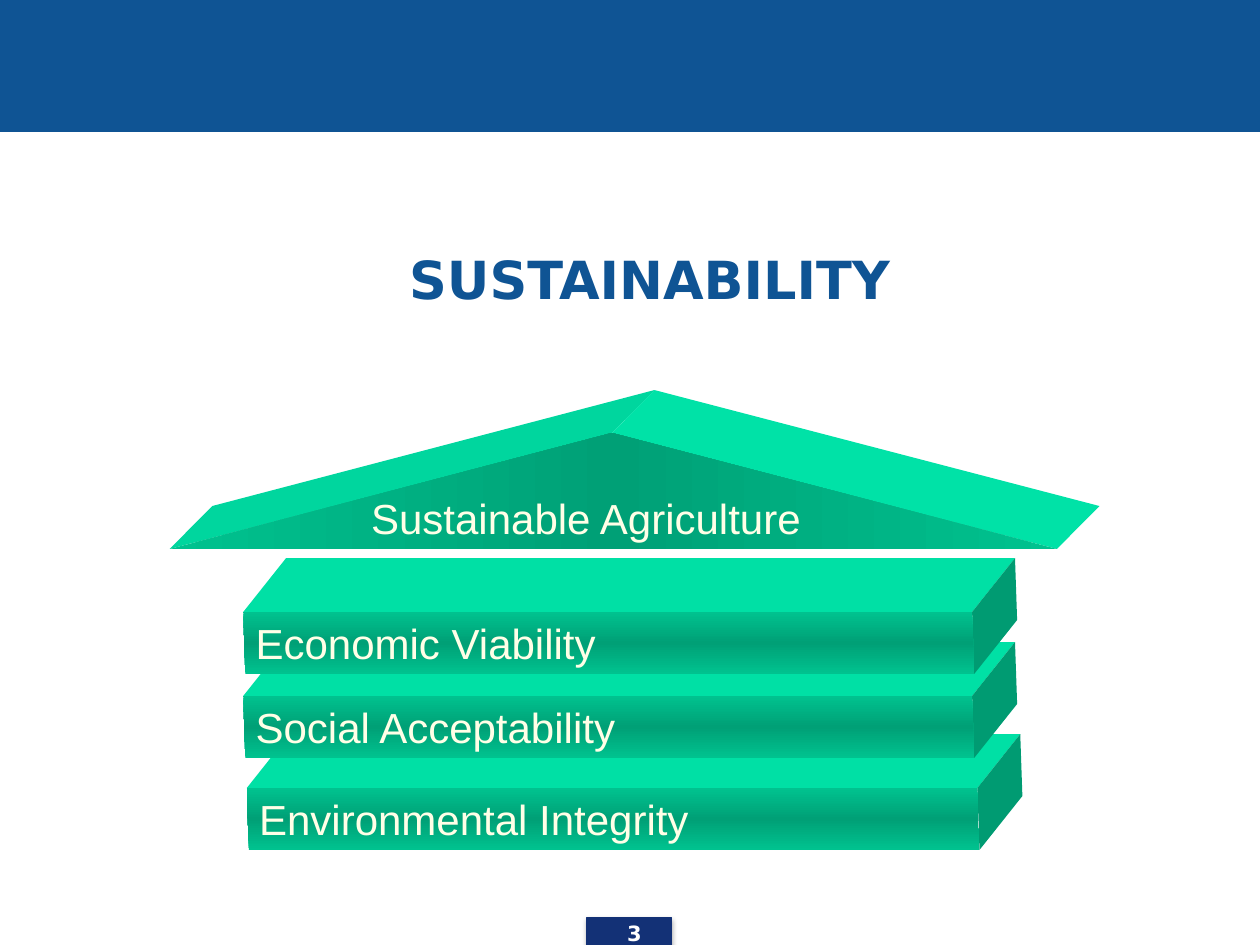
from copy import deepcopy

from lxml.etree import SubElement
from pptx import Presentation
from pptx.dml.color import RGBColor
from pptx.enum.shapes import MSO_SHAPE
from pptx.enum.text import MSO_ANCHOR, PP_ALIGN
from pptx.oxml.ns import qn
from pptx.util import Pt

COLORS = {
    "band": "0F5494",
    "badge": "133176",
    "white": "FFFFFF",
    "cream": "FFFFE7",
    "front_edge": "00C28F",
    "front_middle": "00A076",
    "bar_top": "00E0A5",
    "bar_side": "009B72",
    "roof_left": "00D69E",
    "roof_right": "00E2A7",
    "shadow": "000000",
}
LAYERS = [
    ("Environmental Integrity", 141, 450.3, 417.5),
    ("Social Acceptability", 139, 397.7, 416.5),
    ("Economic Viability", 139, 349.7, 416.5),
]
BAR_HEIGHT, BAR_SKEW = 35.4, 1.2
BAR_DEPTH = (24.5, -30.8)
ROOF_DEPTH = (24.3, -24.5)


def color(name):
    """Return the named colour."""
    return RGBColor.from_string(COLORS[name])


def shifted(point, offset):
    """Move a point by an offset."""
    return point[0] + offset[0], point[1] + offset[1]


def write(shape, text, size, tint, font, bold=False,
          align=PP_ALIGN.LEFT, anchor=MSO_ANCHOR.MIDDLE):
    """Write one formatted line into a shape."""
    frame = shape.text_frame
    frame.word_wrap = True
    frame.vertical_anchor = anchor
    line = frame.paragraphs[0]
    line.alignment = align
    run = line.add_run()
    run.text = text
    run.font.size = Pt(size)
    run.font.name = font
    run.font.bold = bold
    run.font.color.rgb = color(tint)
    return line


def add_rectangle(slide, left, top, width, height, tint):
    """Add a plain rectangle with a matching outline."""
    rectangle = slide.shapes.add_shape(
        MSO_SHAPE.RECTANGLE, Pt(left), Pt(top), Pt(width), Pt(height))
    rectangle.shadow.inherit = False
    rectangle.fill.solid()
    rectangle.fill.fore_color.rgb = color(tint)
    rectangle.line.color.rgb = color(tint)
    rectangle.line.width = Pt(0.75)
    return rectangle


def add_face(slide, corners, tint=None):
    """Add an unlined polygon, solid when a tint is given."""
    points = [(Pt(x), Pt(y)) for x, y in corners]
    builder = slide.shapes.build_freeform(*points[0], scale=1.0)
    builder.add_line_segments(points[1:], close=True)
    face = builder.convert_to_shape()
    face.shadow.inherit = False
    face.line.fill.background()
    if tint:
        face.fill.solid()
        face.fill.fore_color.rgb = color(tint)
    return face


def shade(face, angle):
    """Give a front face a gradient that is darkest in the middle."""
    face.fill.gradient()
    face.fill.gradient_angle = angle
    for stop in face.fill.gradient_stops:
        stop.color.rgb = color("front_edge")
    stops = face._element.spPr.find(qn("a:gradFill")).find(qn("a:gsLst"))
    stops.insert(1, deepcopy(stops[0]))
    middle = face.fill.gradient_stops[1]
    middle.position = 0.5
    middle.color.rgb = color("front_middle")


def add_bar(slide, text, left, top, width):
    """Add a labelled block with a top and a side face."""
    upper_left, upper_right = (left, top), (left + width, top)
    down = (BAR_SKEW, BAR_HEIGHT)
    lower_left, lower_right = shifted(upper_left, down), shifted(upper_right, down)
    back_left, back_right, back_lower = (
        shifted(corner, BAR_DEPTH)
        for corner in (upper_left, upper_right, lower_right))
    add_face(slide, [upper_left, back_left, back_right, upper_right], "bar_top")
    add_face(slide, [upper_right, back_right, back_lower, lower_right], "bar_side")
    front = add_face(slide, [upper_left, upper_right, lower_right, lower_left])
    shade(front, 90)
    write(front, text, 24, "cream", "Arial")


def add_roof(slide, text):
    """Add the gable with its two roof faces and its label."""
    left, peak, right = (97, 313.7), (349.7, 247.4), (604, 313.7)
    back_left, back_peak, back_right = (
        shifted(corner, ROOF_DEPTH) for corner in (left, peak, right))
    add_face(slide, [left, back_left, back_peak, peak], "roof_left")
    add_face(slide, [peak, back_peak, back_right, right], "roof_right")
    shade(add_face(slide, [left, peak, right]), 0)
    label = slide.shapes.add_textbox(Pt(205), Pt(278), Pt(349), Pt(36))
    write(label, text, 24, "cream", "Arial")


def add_page_number(slide, number):
    """Add the shadowed badge and the page number."""
    badge = add_rectangle(slide, 335.5, 524.2, 48.2, 15.8, "badge")
    effects = badge._element.spPr.find(qn("a:effectLst"))
    shadow = SubElement(effects, qn("a:outerShdw"), blurRad=str(Pt(3.1)),
                        dist=str(Pt(1.8)), dir="5400000", rotWithShape="0")
    tint = SubElement(shadow, qn("a:srgbClr"), val=COLORS["shadow"])
    SubElement(tint, qn("a:alpha"), val="35000")
    label = slide.shapes.add_textbox(Pt(337.7), Pt(522.7), Pt(49.7), Pt(18.7))
    write(label, number, 12, "white", "DejaVu Sans", True,
          PP_ALIGN.CENTER, MSO_ANCHOR.TOP)


def set_title(slide, text):
    """Place and format the title."""
    title = slide.shapes.title
    title.left, title.top = Pt(24.5), Pt(122.4)
    title.width, title.height = Pt(676), Pt(73.4)
    line = write(title, text, 30, "band", "DejaVu Sans", True, PP_ALIGN.CENTER)
    line._p.get_or_add_pPr().set("marL", str(Pt(28)))


def main():
    """Build the sustainability slide."""
    deck = Presentation()
    deck.slide_width, deck.slide_height = Pt(720), Pt(540)
    slide = deck.slides.add_slide(deck.slide_layouts[5])
    add_rectangle(slide, 0, 0, 720, 75.4, "band")
    set_title(slide, "SUSTAINABILITY ")
    add_page_number(slide, "3")
    add_roof(slide, "Sustainable Agriculture")
    for layer in LAYERS:
        add_bar(slide, *layer)
    deck.save("out.pptx")


if __name__ == "__main__":
    main()
